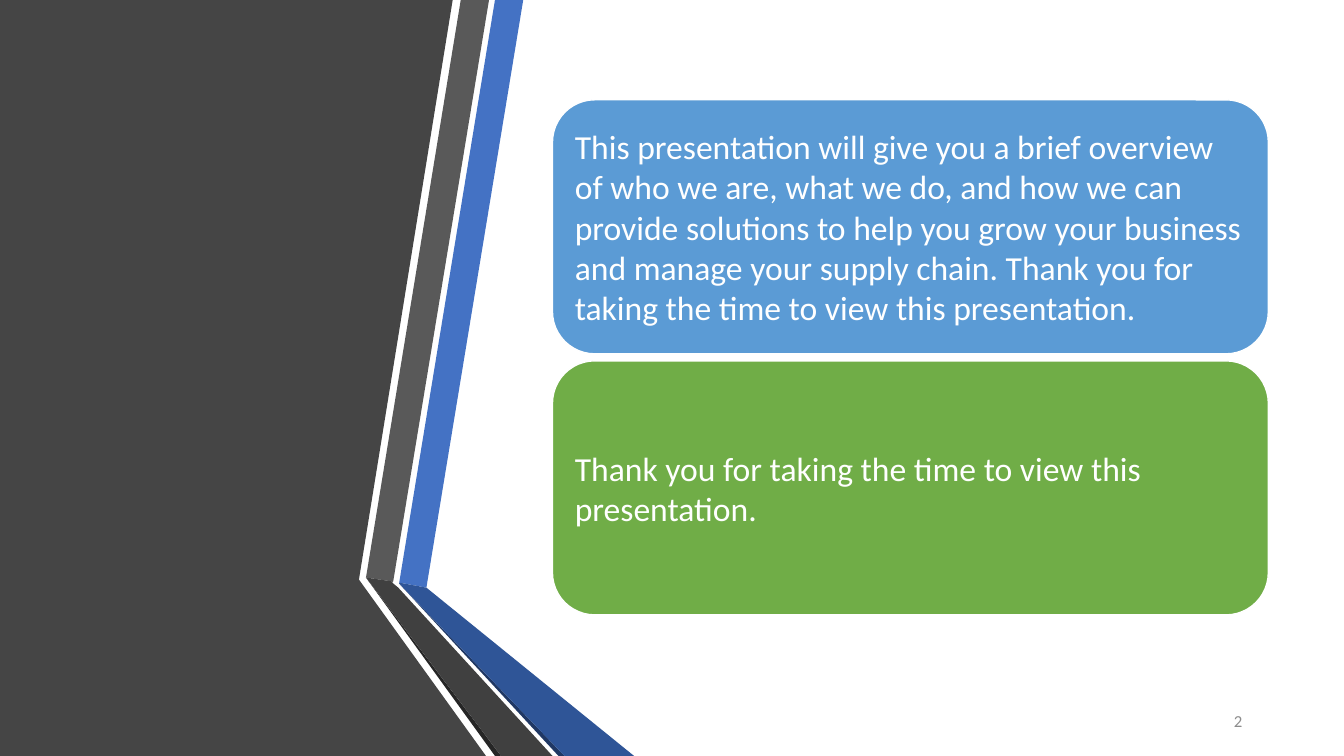
from pptx import Presentation
from pptx.dml.color import RGBColor
from pptx.enum.shapes import MSO_SHAPE
from pptx.enum.text import MSO_ANCHOR, PP_ALIGN
from pptx.util import Inches, Pt

WIDTH, HEIGHT = 13.33, 7.5
PANEL = [(0, 0), (4.49, 0), (3.56, 5.75), (4.82, 7.5), (0, 7.5)]
RIBBONS = [
    ("4472C4", [(3.96, 5.78), (4.23, 5.83), (5.19, 0), (4.91, 0)]),
    ("595959", [(4.85, 0), (4.57, 0), (3.63, 5.73), (3.9, 5.77)]),
    ("262626", [(3.63, 5.73), (4.91, 7.5), (4.97, 7.5)]),
    ("203864", [(3.96, 5.79), (5.54, 7.5), (5.6, 7.5)]),
    ("2F5597", [(3.96, 5.79), (5.6, 7.5), (6.29, 7.5), (4.23, 5.83), (3.96, 5.78)]),
    ("404040", [(5.48, 7.5), (3.95, 5.83), (3.89, 5.78), (3.9, 5.77),
                (3.63, 5.73), (4.97, 7.5)]),
]
MESSAGES = [
    ("5B9BD5", "This presentation will give you a brief overview of who we are, "
               "what we do, and how we can provide solutions to help you grow your "
               "business and manage your supply chain. Thank you for taking the time "
               "to view this presentation."),
    ("70AD47", "Thank you for taking the time to view this presentation."),
]


def rgb(color):
    """Turn a hex string into a colour."""
    return RGBColor.from_string(color)


def write(tf, text, size=24, color="FFFFFF", align=PP_ALIGN.LEFT):
    """Fill a text frame with one formatted, vertically centred paragraph."""
    tf.word_wrap = True
    tf.vertical_anchor = MSO_ANCHOR.MIDDLE
    p = tf.paragraphs[0]
    p.alignment = align
    r = p.add_run()
    r.text = text
    r.font.name = "Calibri"
    r.font.size = Pt(size)
    r.font.color.rgb = rgb(color)


def add_polygon(shapes, points, color, left=0, top=0):
    """Draw a filled outline through points given relative to left and top."""
    moved = [(Inches(left + x), Inches(top + y)) for x, y in points]
    fb = shapes.build_freeform(*moved[0])
    fb.add_line_segments(moved[1:], close=True)
    sp = fb.convert_to_shape()
    sp.shadow.inherit = False
    sp.fill.solid()
    sp.fill.fore_color.rgb = rgb(color)
    sp.line.fill.background()


def add_side_panel(s, left, top):
    """Draw the dark panel and its grouped folded ribbons."""
    add_polygon(s.shapes, PANEL, "454545", left, top)
    ribbons = s.shapes.add_group_shape()
    for color, points in RIBBONS:
        add_polygon(ribbons.shapes, points, color, left, top)


def add_messages(s, left, top, width, height, gap=0.07):
    """Stack equal rounded message cards inside the box."""
    card_height = (height - gap * (len(MESSAGES) - 1)) / len(MESSAGES)
    for i, (color, text) in enumerate(MESSAGES):
        sp = s.shapes.add_shape(
            MSO_SHAPE.ROUNDED_RECTANGLE, Inches(left),
            Inches(top + i * (card_height + gap)), Inches(width), Inches(card_height))
        sp.shadow.inherit = False
        sp.fill.solid()
        sp.fill.fore_color.rgb = rgb(color)
        sp.line.color.rgb = rgb("FFFFFF")
        sp.line.width = Pt(1)
        tf = sp.text_frame
        tf.margin_left = tf.margin_right = Inches(0.1)
        tf.margin_top = tf.margin_bottom = Inches(0.1)
        write(tf, text)


def add_page_number(s, left, top, width, height):
    """Place the page number at the right of the box."""
    sp = s.shapes.add_textbox(Inches(left), Inches(top), Inches(width), Inches(height))
    write(sp.text_frame, "2", size=12, color="8C8C8C", align=PP_ALIGN.RIGHT)


def main():
    """Build and save the slide."""
    prs = Presentation()
    prs.slide_width, prs.slide_height = Inches(WIDTH), Inches(HEIGHT)
    s = prs.slides.add_slide(prs.slide_layouts[6])
    add_side_panel(s, 0, 0)
    add_messages(s, 5.48, 0.99, 7.1, 5.11)
    add_page_number(s, 9.42, 6.95, 3, 0.4)
    prs.save("out.pptx")


if __name__ == "__main__":
    main()
